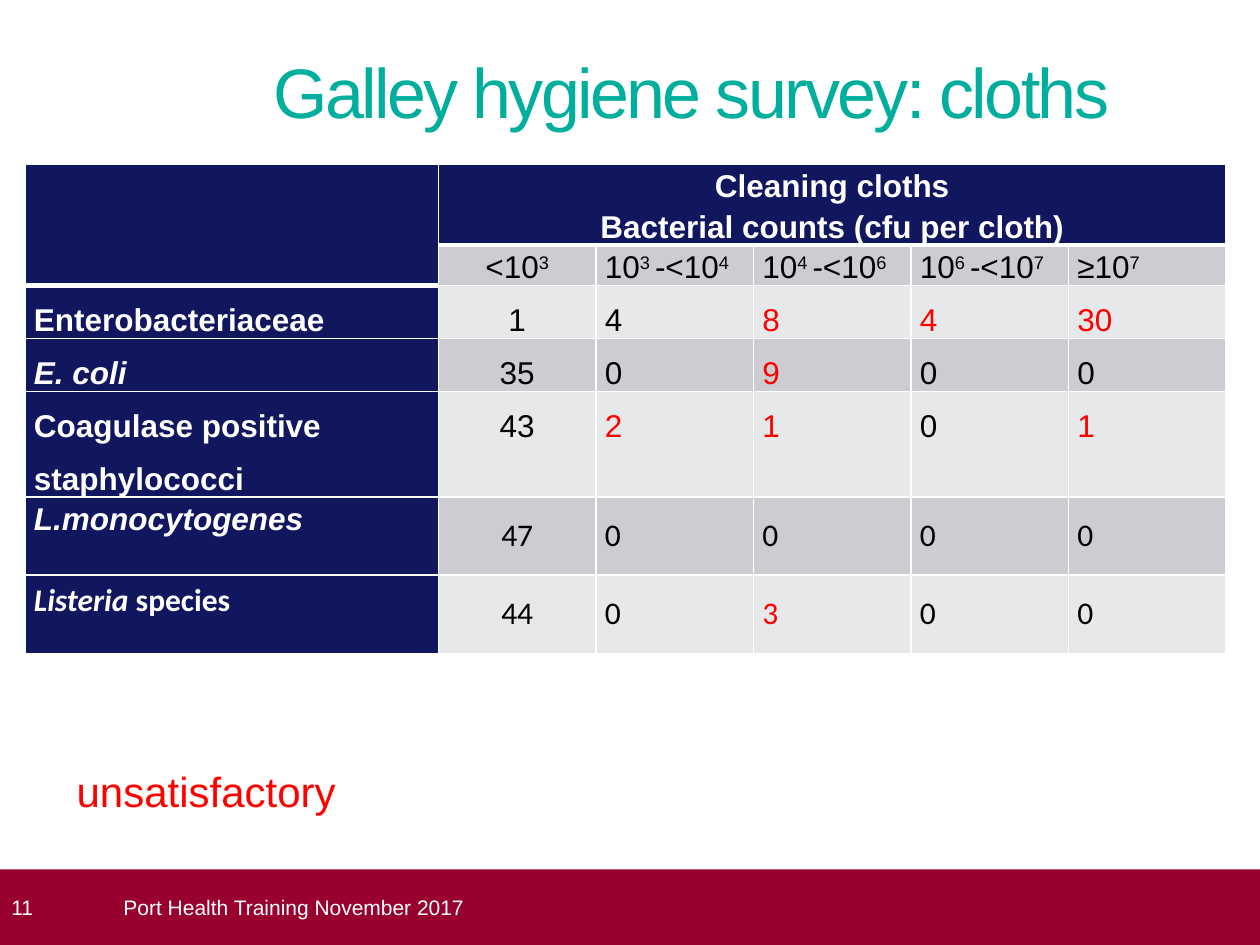
"""Build the galley hygiene survey slide with its table of cloth counts."""
import pptx
import pptx.dml.color
import pptx.enum.shapes
import pptx.enum.text
import pptx.oxml
import pptx.oxml.ns
import pptx.util

Inches = pptx.util.Inches
RGBColor = pptx.dml.color.RGBColor
ALIGN = pptx.enum.text.PP_ALIGN
MIDDLE = pptx.enum.text.MSO_ANCHOR.MIDDLE

TEAL = RGBColor(0x00, 0xAE, 0x9E)
NAVY = RGBColor(0x11, 0x17, 0x5E)
MAROON = RGBColor(0x98, 0x00, 0x2E)
DARK_BAND = RGBColor(0xCC, 0xCC, 0xD2)
LIGHT_BAND = RGBColor(0xE7, 0xE8, 0xEA)
WHITE = RGBColor(0xFF, 0xFF, 0xFF)
BLACK = RGBColor(0x00, 0x00, 0x00)
RED = RGBColor(0xFF, 0x00, 0x00)

TITLE = "Galley hygiene survey: cloths"
HEADING = ["Cleaning cloths", "Bacterial counts (cfu per cloth)"]
RANGES = ["<10^3", "10^3 ^-<10^4", "10^4 ^-<10^6", "10^6 ^-<10^7", "≥10^7"]
ORGANISMS = [
    {"italic": "", "plain": "Enterobacteriaceae", "counts": [1, 4, 8, 4, 30],
     "red_from": 2, "name_spacing": 1.5, "fonts": ("Arial", "Arial")},
    {"italic": "E. coli", "plain": "", "counts": [35, 0, 9, 0, 0],
     "red_from": 1, "name_spacing": 1.5, "fonts": ("Arial", "Arial")},
    {"italic": "", "plain": "Coagulase positive staphylococci", "counts": [43, 2, 1, 0, 1],
     "red_from": 1, "name_spacing": 1.5, "fonts": ("Arial", "Arial")},
    {"italic": "L.monocytogenes", "plain": "", "counts": [47, 0, 0, 0, 0],
     "red_from": 1, "name_spacing": 1.15, "fonts": ("Arial", "Calibri")},
    {"italic": "Listeria", "plain": " species", "counts": [44, 0, 3, 0, 0],
     "red_from": 1, "name_spacing": 1.15, "fonts": ("Calibri", "Calibri")},
]
COLUMN_WIDTHS = [3.28] + [1.25] * len(RANGES)
ROW_HEIGHTS = [0.62, 0.31, 0.4, 0.4, 0.62, 0.62, 0.62]


def style(font, size, color, name="Arial", bold=False, italic=False):
    font.size = pptx.util.Pt(size)
    font.name = name
    font.color.rgb = color
    font.bold = bold
    font.italic = italic


def set_insets(frame, left=0, right=0):
    frame.margin_left, frame.margin_right = Inches(left), Inches(right)
    frame.margin_top = frame.margin_bottom = 0


def write_line(paragraph, pieces, color, spacing, align, name="Arial", bold=False):
    paragraph.alignment = align
    paragraph.line_spacing = spacing
    for text, italic, raised in pieces:
        if text:
            span = paragraph.add_run()
            span.text = text
            style(span.font, 18, color, name, bold, italic)
            if raised:
                span._r.get_or_add_rPr().set("baseline", "30000")


def paint_cell(cell, fill, bottom_width):
    set_insets(cell, 0.07, 0.07)
    cell.fill.solid()
    cell.fill.fore_color.rgb = fill
    widths = {"lnL": 1, "lnR": 1, "lnT": 1, "lnB": bottom_width}
    for place, (tag, width) in enumerate(widths.items()):
        border = pptx.oxml.parse_xml(
            f'<a:{tag} {pptx.oxml.ns.nsdecls("a")} w="{width * 12700}">'
            f'<a:solidFill><a:srgbClr val="{WHITE}"/></a:solidFill></a:{tag}>')
        cell._tc.get_or_add_tcPr().insert(place, border)


def add_survey_table(page):
    frame = page.shapes.add_table(
        len(ROW_HEIGHTS), len(COLUMN_WIDTHS), Inches(0.2), Inches(1.3),
        Inches(sum(COLUMN_WIDTHS)), Inches(sum(ROW_HEIGHTS)))
    table = frame.table
    for column, width in zip(table.columns, COLUMN_WIDTHS):
        column.width = Inches(width)
    for row, height in zip(table.rows, ROW_HEIGHTS):
        row.height = Inches(height)
    for row in range(len(ROW_HEIGHTS)):
        for column in range(len(COLUMN_WIDTHS)):
            band = DARK_BAND if row % 2 else LIGHT_BAND
            fill = NAVY if row == 0 or column == 0 else band
            heading = row == 0 or (row == 1 and column == 0)
            paint_cell(table.cell(row, column), fill, 3 if heading else 1)
    table.cell(0, 0).merge(table.cell(1, 0))
    table.cell(0, 1).merge(table.cell(0, len(RANGES)))

    heading_frame = table.cell(0, 1).text_frame
    heading_frame.add_paragraph()
    for paragraph, text in zip(heading_frame.paragraphs, HEADING):
        write_line(paragraph, [(text, False, False)], WHITE, 1.15, ALIGN.CENTER, bold=True)
    alignments = [ALIGN.CENTER] + [ALIGN.LEFT] * (len(RANGES) - 1)
    for column, (label, align) in enumerate(zip(RANGES, alignments), 1):
        pieces = [(text, False, place % 2 == 1) for place, text in enumerate(label.split("^"))]
        write_line(table.cell(1, column).text_frame.paragraphs[0], pieces, BLACK, 1.15, align)
    for row, organism in enumerate(ORGANISMS, 2):
        name_font, count_font = organism["fonts"]
        pieces = [(organism["italic"], True, False), (organism["plain"], False, False)]
        write_line(table.cell(row, 0).text_frame.paragraphs[0], pieces, WHITE,
                   organism["name_spacing"], ALIGN.LEFT, name_font, True)
        for place, (count, align) in enumerate(zip(organism["counts"], alignments)):
            color = RED if count and place >= organism["red_from"] else BLACK
            write_line(table.cell(row, place + 1).text_frame.paragraphs[0],
                       [(str(count), False, False)], color, 1.5, align, count_font)


def add_label(page, text, place, size, color):
    box = page.shapes.add_textbox(*map(Inches, place))
    box.text_frame.word_wrap = True
    box.text_frame.text = text
    style(box.text_frame.paragraphs[0].runs[0].font, size, color)
    return box


def main():
    deck = pptx.Presentation()
    deck.slide_width, deck.slide_height = Inches(10), Inches(7.5)
    page = deck.slides.add_slide(deck.slide_layouts[5])

    title = page.shapes.title
    title.left, title.top = Inches(2.17), Inches(0.36)
    title.width, title.height = Inches(8.78), Inches(0.71)
    title.text_frame.text = TITLE
    title.text_frame.vertical_anchor = MIDDLE
    set_insets(title.text_frame)
    paragraph = title.text_frame.paragraphs[0]
    paragraph.alignment = ALIGN.LEFT
    style(paragraph.runs[0].font, 40, TEAL)
    paragraph.runs[0]._r.get_or_add_rPr().set("spc", "-150")

    add_survey_table(page)

    band = page.shapes.add_shape(pptx.enum.shapes.MSO_SHAPE.RECTANGLE,
                                 0, Inches(6.9), Inches(10), Inches(0.6))
    band.shadow.inherit = False
    band.fill.solid()
    band.fill.fore_color.rgb = MAROON
    band.line.fill.background()
    band.text_frame.text = "11"
    band.text_frame.vertical_anchor = MIDDLE
    set_insets(band.text_frame, 0.09, 0.1)
    band.text_frame.paragraphs[0].alignment = ALIGN.LEFT
    style(band.text_frame.paragraphs[0].runs[0].font, 12, WHITE)

    footer = add_label(page, "Port Health Training November 2017",
                       (0.98, 6.9, 8.82, 0.6), 12, WHITE)
    footer.text_frame.vertical_anchor = MIDDLE
    set_insets(footer.text_frame)
    add_label(page, "unsatisfactory", (0.51, 6.03, 5.35, 0.5), 24, RED)
    deck.save("out.pptx")


if __name__ == "__main__":
    main()
